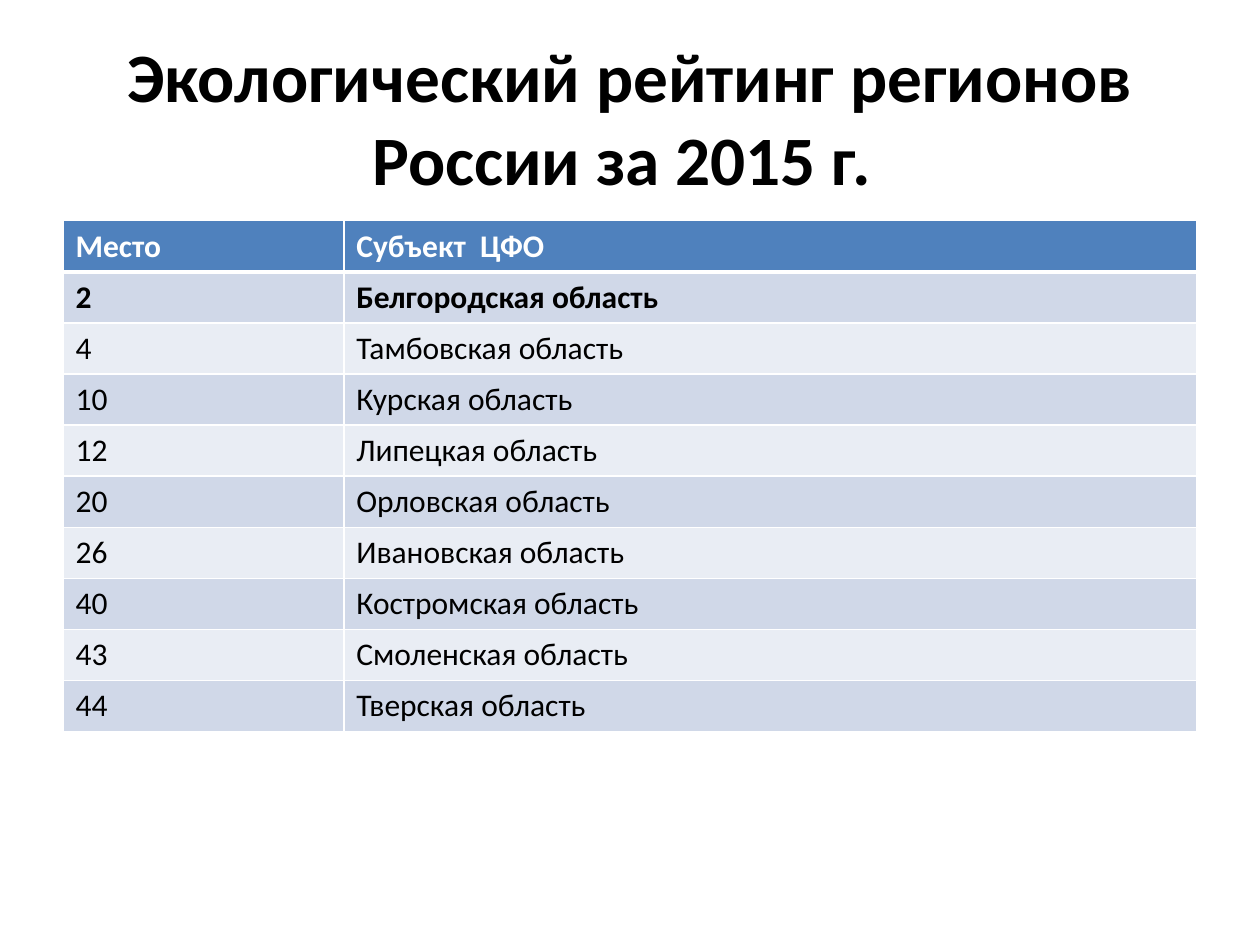
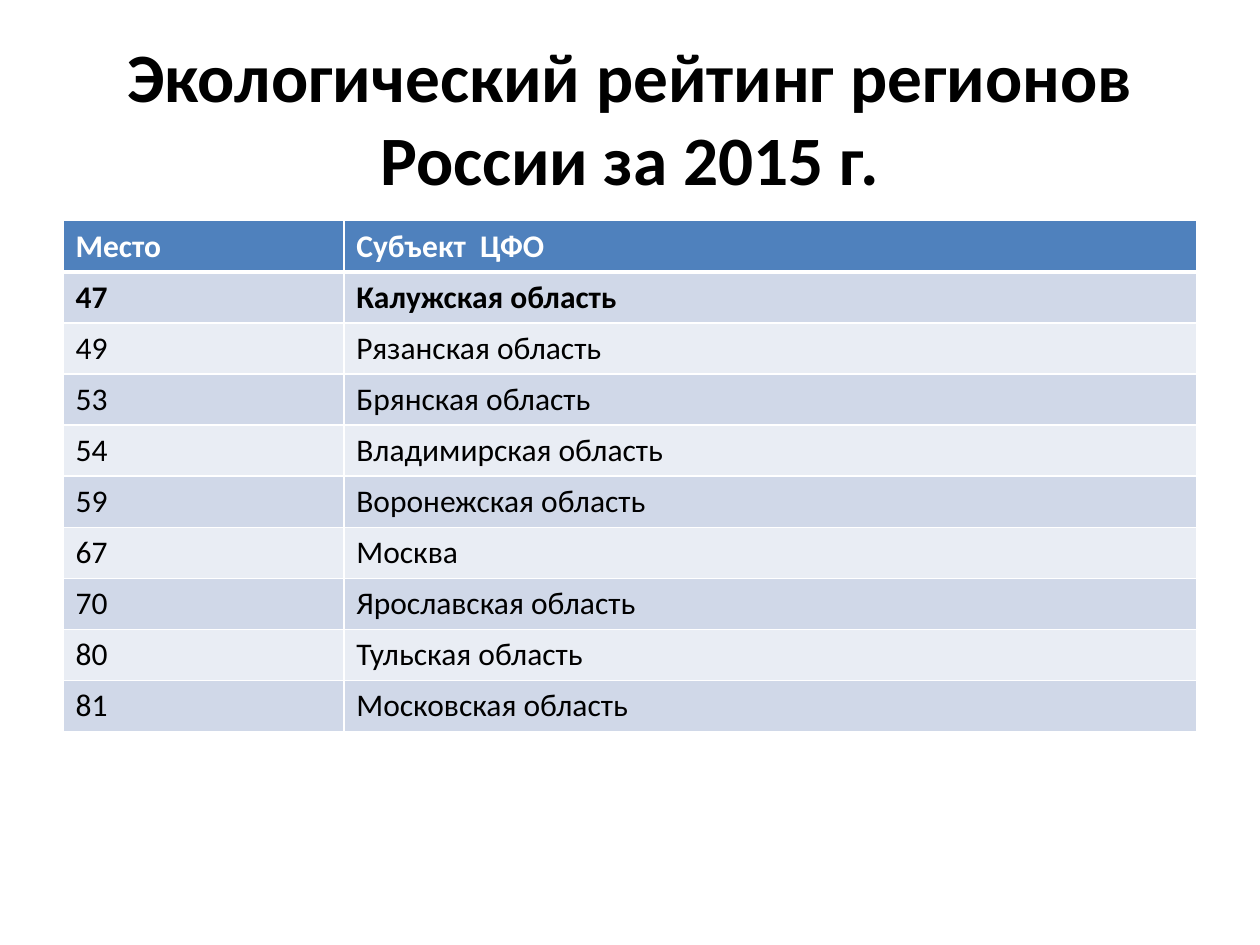
from lxml.etree import SubElement
from pptx import Presentation
from pptx.dml.color import RGBColor
from pptx.enum.text import MSO_ANCHOR, MSO_AUTO_SIZE, PP_ALIGN
from pptx.oxml.ns import qn
from pptx.util import Cm, Pt

COLORS = {
    "header": "4F81BD",
    "band_dark": "D0D8E8",
    "band_light": "E9EDF4",
    "white": "FFFFFF",
    "black": "000000",
}
FONT = "Calibri"
LEFT, WIDTH = Cm(1.27), Cm(22.86)
COLUMN_WIDTHS = [Cm(5.66), Cm(17.2)]
ROW_HEIGHT = Cm(1.03)

TITLE = "Экологический рейтинг регионов России за 2015 г."
HEADER = ("Место", "Субъект  ЦФО")
RATINGS = [
    (TITLE + " ", [
        ("2", "Белгородская область"),
        ("4", "Тамбовская область"),
        ("10", "Курская область"),
        ("12", "Липецкая область"),
        ("20", "Орловская область"),
        ("26", "Ивановская область"),
        ("40", "Костромская область"),
        ("43", "Смоленская область"),
        ("44", "Тверская область"),
    ]),
    (TITLE, [
        ("47", "Калужская область"),
        ("49", "Рязанская область"),
        ("53", "Брянская область"),
        ("54", "Владимирская область"),
        ("59", "Воронежская область"),
        ("67", "Москва"),
        ("70", "Ярославская область"),
        ("80", "Тульская область"),
        ("81", "Московская область"),
    ]),
]


def write(frame, text, size=18, color="black", bold=False, align=PP_ALIGN.LEFT):
    para = frame.paragraphs[0]
    para.alignment = align
    span = para.add_run()
    span.text = text
    span.font.name = FONT
    span.font.size = Pt(size)
    span.font.bold = bold
    span.font.color.rgb = RGBColor.from_string(COLORS[color])


def add_borders(cell, **widths):
    properties = cell._tc.get_or_add_tcPr()
    for side in ("L", "R", "T", "B"):
        line = SubElement(properties, qn(f"a:ln{side}"), w=str(Pt(widths.get(side, 1))))
        fill = SubElement(line, qn("a:solidFill"))
        SubElement(fill, qn("a:srgbClr"), val=COLORS["white"])


deck = Presentation()
deck.slide_width, deck.slide_height = Cm(25.4), Cm(19.05)
title_only = deck.slide_layouts[5]

for title, regions in RATINGS:
    page = deck.slides.add_slide(title_only)

    # Title
    box = page.shapes.title
    box.left, box.top, box.width, box.height = LEFT, Cm(0.76), WIDTH, Cm(3.18)
    box.text_frame.word_wrap = True
    box.text_frame.auto_size = MSO_AUTO_SIZE.NONE
    box.text_frame.vertical_anchor = MSO_ANCHOR.MIDDLE
    write(box.text_frame, title, size=39.6, bold=True, align=PP_ALIGN.CENTER)

    # Rating table
    rows = [HEADER] + regions
    table = page.shapes.add_table(
        len(rows), len(HEADER), LEFT, Cm(4.45), WIDTH, ROW_HEIGHT * len(rows)
    ).table
    for column, width in zip(table.columns, COLUMN_WIDTHS):
        column.width = width

    # Header, then alternating bands; the leading region is bold
    for row_index, values in enumerate(rows):
        table.rows[row_index].height = ROW_HEIGHT
        is_header = row_index == 0
        band = "band_dark" if row_index % 2 else "band_light"
        for column_index, value in enumerate(values):
            cell = table.cell(row_index, column_index)
            add_borders(cell, T=3 if row_index == 1 else 1, B=3 if is_header else 1)
            cell.fill.solid()
            cell.fill.fore_color.rgb = RGBColor.from_string(
                COLORS["header" if is_header else band]
            )
            write(cell.text_frame, value, bold=row_index < 2,
                  color="white" if is_header else "black")

deck.save("out.pptx")
